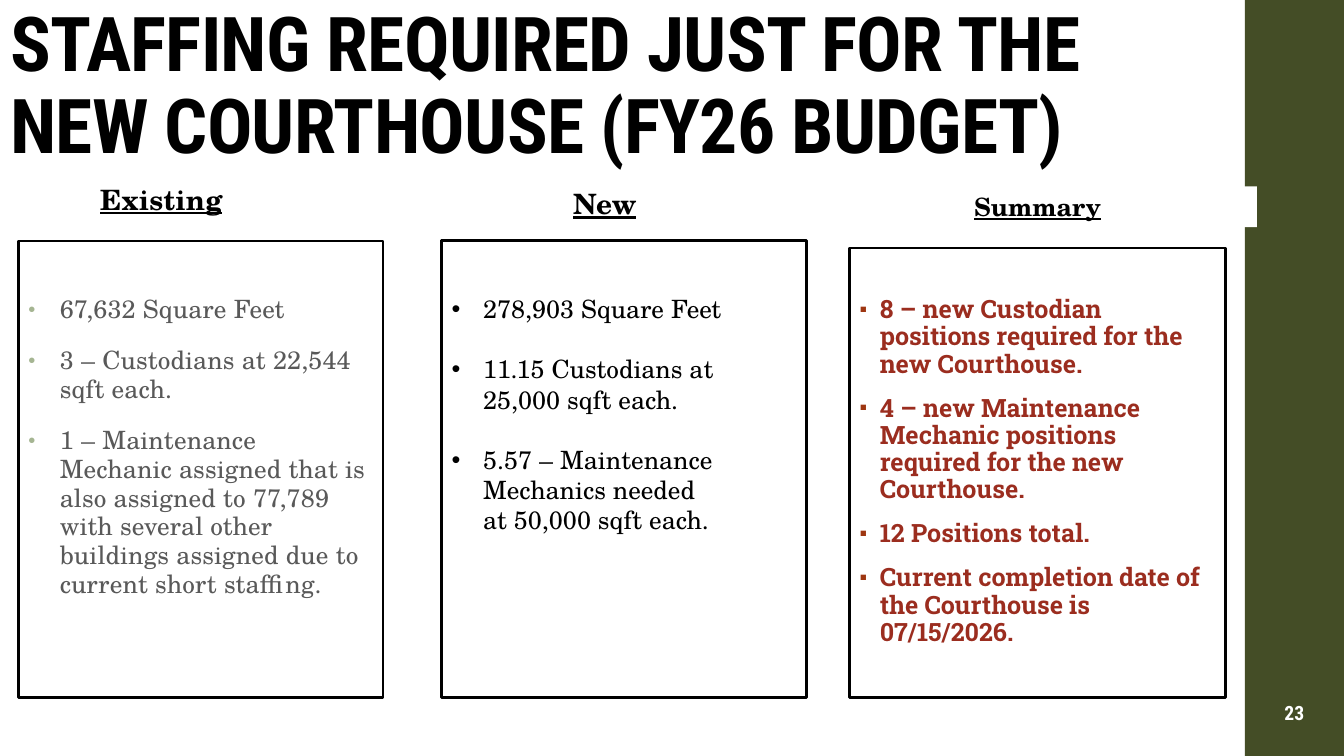
"""Build the courthouse staffing slide."""
from dataclasses import dataclass

from lxml import etree
from pptx import Presentation
from pptx import util as u
from pptx.dml.color import RGBColor
from pptx.enum import shapes, text
from pptx.oxml.ns import qn

Pt = u.Pt
HUES = {"ink": "000000", "paper": "FFFFFF", "olive": "444D26", "gray": "595959",
        "sage": "A5B592", "red": "9B2D1F", "rust": "9E3611"}
SERIF, SLAB, SANS = "TeX Gyre Schola", "Roboto Slab", "Roboto Condensed"
LEFT, MID = text.PP_ALIGN.LEFT, text.PP_ALIGN.CENTER
TOP, BASE, HALF = (text.MSO_ANCHOR.TOP, text.MSO_ANCHOR.BOTTOM,
                   text.MSO_ANCHOR.MIDDLE)
Box = tuple[float, float, float, float]


@dataclass
class Mark:
    """Bullet sign, its hue, its size in percent and its hanging indent."""
    sign: str
    hue: str
    size: int
    hang: float


@dataclass
class Head:
    """Column heading."""
    words: str
    box: Box
    slot: int | None
    form: dict


@dataclass
class List:
    """Bulleted column."""
    items: list[str]
    box: Box
    slot: int | None
    edge: bool
    form: dict


HEADS = [
    Head("Existing", (63.4, 108, 159.1, 50.4), 1,
         dict(size=20, anchor=BASE, line=0.95, after=2, track=10,
              pads=(7.2, 3.6, 62.6, 3.6))),
    Head("New", (365.8, 121.7, 159.1, 50.4), 3,
         dict(size=20, anchor=HALF, line=0.9, pads=(7.2, 3.6, 33.8, 3.6))),
    Head("Summary", (584.6, 133.2, 313.2, 29), None, dict(size=18)),
]
LISTS = [
    List(["67,632 Square Feet",
          "3 – Custodians at 22,544 sqft each.",
          "1 – Maintenance Mechanic assigned that is also assigned to 77,789 "
          "with several other buildings assigned due to current short staffing."],
         (13, 172.1, 260.6, 326.2), 2, True,
         dict(hue="gray", line=0.95, before=14, after=2, track=10,
              pads=(7.2, 39, 7.2, 3.6), mark=Mark("•", "sage", 80, 22.5))),
    List(["278,903 Square Feet",
          "11.15 Custodians at 25,000 sqft each.",
          "5.57 – Maintenance Mechanics needed at 50,000 sqft each."],
         (315.4, 205.9, 210.2, 181.4), 4, False,
         dict(before=21.5, mark=Mark("•", "ink", 100, 22.5))),
    List(["8 – new Custodian positions required for the new Courthouse.",
          "4 – new Maintenance Mechanic positions required for the new Courthouse.",
          "12 Positions total.",
          "Current completion date of the Courthouse is 07/15/2026."],
         (607, 177.1, 268.6, 321.1), None, True,
         dict(font=SLAB, hue="red", bold=True, line=0.9, before=12,
              pads=(7.2, 35, 7.2, 3.6), mark=Mark("▪", "rust", 85, 14.4))),
]


def rgb(hue: str) -> RGBColor:
    """Give the colour with this name."""
    return RGBColor.from_string(HUES[hue])


def place(shape, box: Box):
    """Move and size a shape."""
    shape.left, shape.top, shape.width, shape.height = map(Pt, box)
    return shape


def frame(shape) -> None:
    """Draw a black outline."""
    shape.line.color.rgb = rgb("ink")
    shape.line.width = Pt(2)


def rect(slide, box: Box, fill: str | None = None):
    """Add a plain rectangle, outlined when it has no fill."""
    shape = slide.shapes.add_shape(shapes.MSO_SHAPE.RECTANGLE, *map(Pt, box))
    shape.shadow.inherit = False
    if fill:
        shape.fill.solid()
        shape.fill.fore_color.rgb = rgb(fill)
        shape.line.fill.background()
    else:
        shape.fill.background()
        frame(shape)
    return shape


def bullet(para, mark: Mark) -> None:
    """Give a paragraph a bullet with a hanging indent."""
    prop = para._p.get_or_add_pPr()
    prop.set("marL", str(Pt(mark.hang)))
    prop.set("indent", str(-Pt(mark.hang)))
    tint = etree.SubElement(prop, qn("a:buClr"))
    etree.SubElement(tint, qn("a:srgbClr"), val=HUES[mark.hue])
    etree.SubElement(prop, qn("a:buSzPct"), val=str(mark.size * 1000))
    etree.SubElement(prop, qn("a:buFont"), typeface="Arial")
    etree.SubElement(prop, qn("a:buChar"), char=mark.sign)


def write(shape, lines: list[str], *, font: str = SERIF, size: float = 18,
          hue: str = "ink", bold: bool = False, under: bool = False,
          align=LEFT, anchor=TOP, line: float = 1, before: float = 0,
          after: float = 0, track: int = 0, mark: Mark | None = None,
          pads: Box = (7.2, 3.6, 7.2, 3.6)) -> None:
    """Fill a shape with formatted paragraphs."""
    body = shape.text_frame
    body.word_wrap = True
    body.auto_size = text.MSO_AUTO_SIZE.NONE
    body.vertical_anchor = anchor
    (body.margin_left, body.margin_top,
     body.margin_right, body.margin_bottom) = map(Pt, pads)
    for i, words in enumerate(lines):
        para = body.add_paragraph() if i else body.paragraphs[0]
        para.alignment, para.line_spacing = align, line
        para.space_before = Pt(before if i else 0)
        para.space_after = Pt(after)
        if mark:
            bullet(para, mark)
        run = para.add_run()
        run.text = words
        run.font.name, run.font.size = font, Pt(size)
        run.font.bold, run.font.underline = bold, under
        run.font.color.rgb = rgb(hue)
        if track:
            run._r.get_or_add_rPr().set("spc", str(track))


def main() -> None:
    """Draw the slide and save it."""
    deck = Presentation()
    deck.slide_width, deck.slide_height = Pt(960), Pt(540)
    slide = deck.slides.add_slide(deck.slide_layouts.get_by_name("Comparison"))
    slots = slide.placeholders
    rect(slide, (889.2, 0, 70.8, 540), "olive")
    write(place(slide.shapes.title, (0, 56.9, 797, 67.7)),
          ["STAFFING REQUIRED JUST FOR THE NEW COURTHOUSE (FY26 BUDGET)"],
          font=SANS, size=54, bold=True, anchor=BASE, line=0.9, track=-50,
          pads=(7.2, 2.2, 7.2, 3.6))
    rect(slide, (315.4, 172.1, 260.6, 326.2))
    for head in HEADS:
        shape = (place(slots[head.slot], head.box) if head.slot
                 else rect(slide, head.box, "paper"))
        write(shape, [head.words], bold=True, under=True, align=MID, **head.form)
    for col in LISTS:
        shape = (place(slots[col.slot], col.box) if col.slot
                 else rect(slide, col.box))
        if col.edge:
            frame(shape)
        write(shape, col.items, **col.form)
    page = slide.shapes.add_textbox(*map(Pt, (889.2, 486, 70.8, 46.8)))
    write(page, ["23"], font=SANS, size=14, hue="paper", bold=True, align=MID,
          anchor=HALF, pads=(3.6, 3.6, 3.6, 3.6))
    deck.save("out.pptx")


if __name__ == "__main__":
    main()
